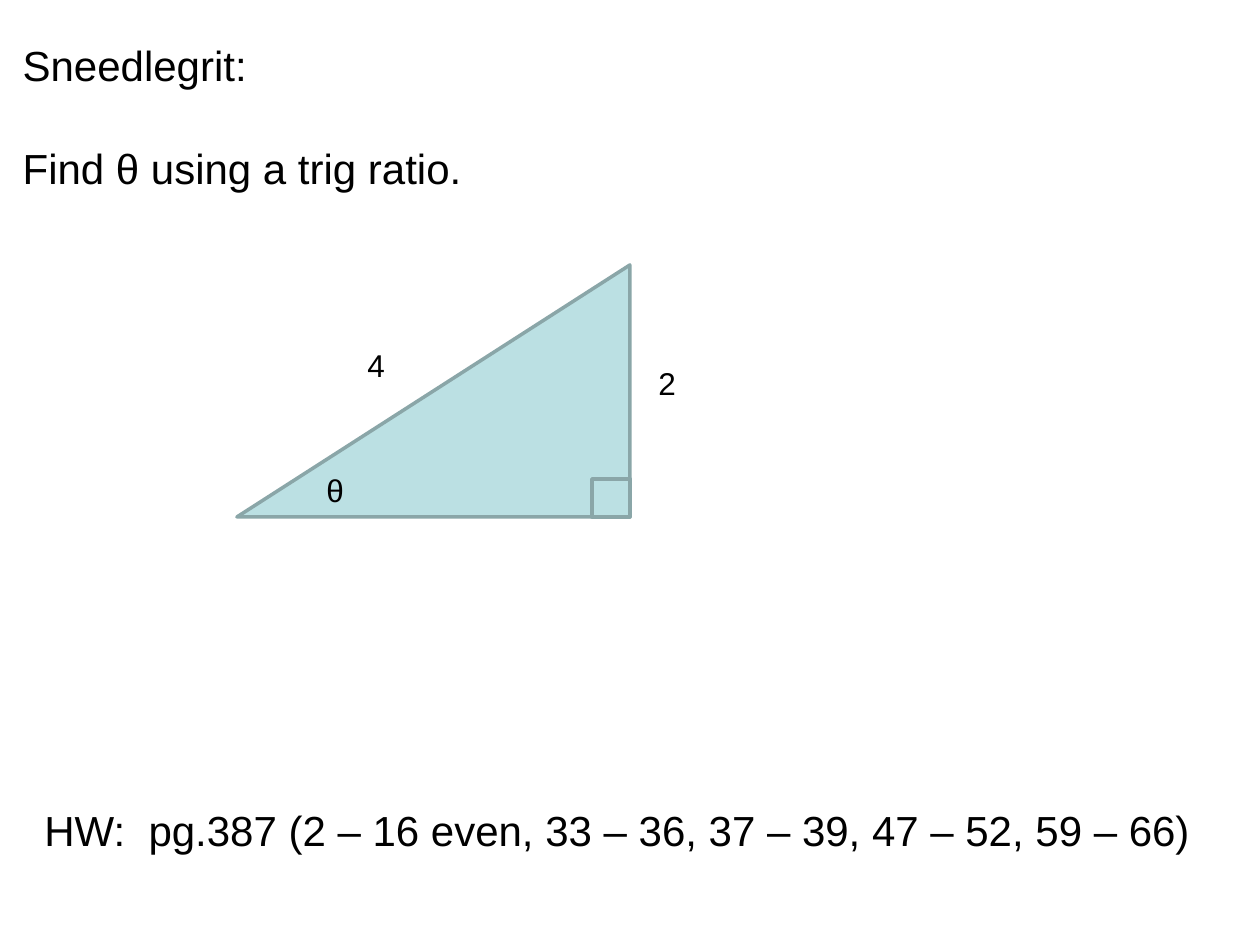
"""Build a trigonometry warm-up slide with a right triangle and homework."""
from pptx import Presentation
from pptx.dml.color import RGBColor
from pptx.enum.shapes import MSO_SHAPE
from pptx.enum.text import MSO_ANCHOR, MSO_AUTO_SIZE, PP_ALIGN
from pptx.util import Pt

TRIANGLE, SQUARE = MSO_SHAPE.RIGHT_TRIANGLE, MSO_SHAPE.RECTANGLE
TOP, MIDDLE = MSO_ANCHOR.TOP, MSO_ANCHOR.MIDDLE
FIXED, LEFT = MSO_AUTO_SIZE.NONE, PP_ALIGN.LEFT
PX = 914400 / 126


def color(code):
    return RGBColor.from_string(code)


def write(box, text, at, size=18, anchor=TOP, gap=0):
    box.left, box.top, box.width, box.height = [round(n * PX) for n in at]
    frame = box.text_frame
    frame.text = text
    frame.word_wrap = True
    frame.auto_size = FIXED
    frame.vertical_anchor = anchor
    for i, para in enumerate(frame.paragraphs):
        para.alignment = LEFT
        para.space_before = Pt(gap if i else 0)
        para.font.size = Pt(size)
        para.font.name = "Arial"
        para.font.color.rgb = color("000000")


deck = Presentation()
deck.slide_width, deck.slide_height = round(1260 * PX), round(945 * PX)
slide = deck.slides.add_slide(deck.slide_layouts[5])
shapes = slide.shapes

write(shapes.title, "Sneedlegrit:\nFind θ using a trig ratio.",
      (10, 32, 1134, 168), size=24, anchor=MIDDLE, gap=30)

right, base = 630, 517
for kind, wide, high in [(TRIANGLE, 393, 252), (SQUARE, 38, 38)]:
    at = (right - wide, base - high, wide, high)
    form = shapes.add_shape(kind, *[round(n * PX) for n in at])
    form.shadow.inherit = False
    form.fill.solid()
    form.fill.fore_color.rgb = color("BBE0E3")
    form.line.color.rgb = color("8AA6A8")
    form.line.width = Pt(2)
    if kind == TRIANGLE:
        form.element.spPr.xfrm.set("flipH", "1")

labels = [
    ("2", (646, 358, 84, 50), 18),
    ("θ", (314, 465, 84, 50), 18),
    ("4", (355, 340, 63, 50), 18),
    ("HW:  pg.387 (2 – 16 even, 33 – 36, 37 – 39, 47 – 52, 59 – 66)",
     (32, 798, 1207, 63), 24),
]
for text, at, size in labels:
    write(shapes.add_textbox(0, 0, 0, 0), text, at, size=size)

deck.save("out.pptx")
